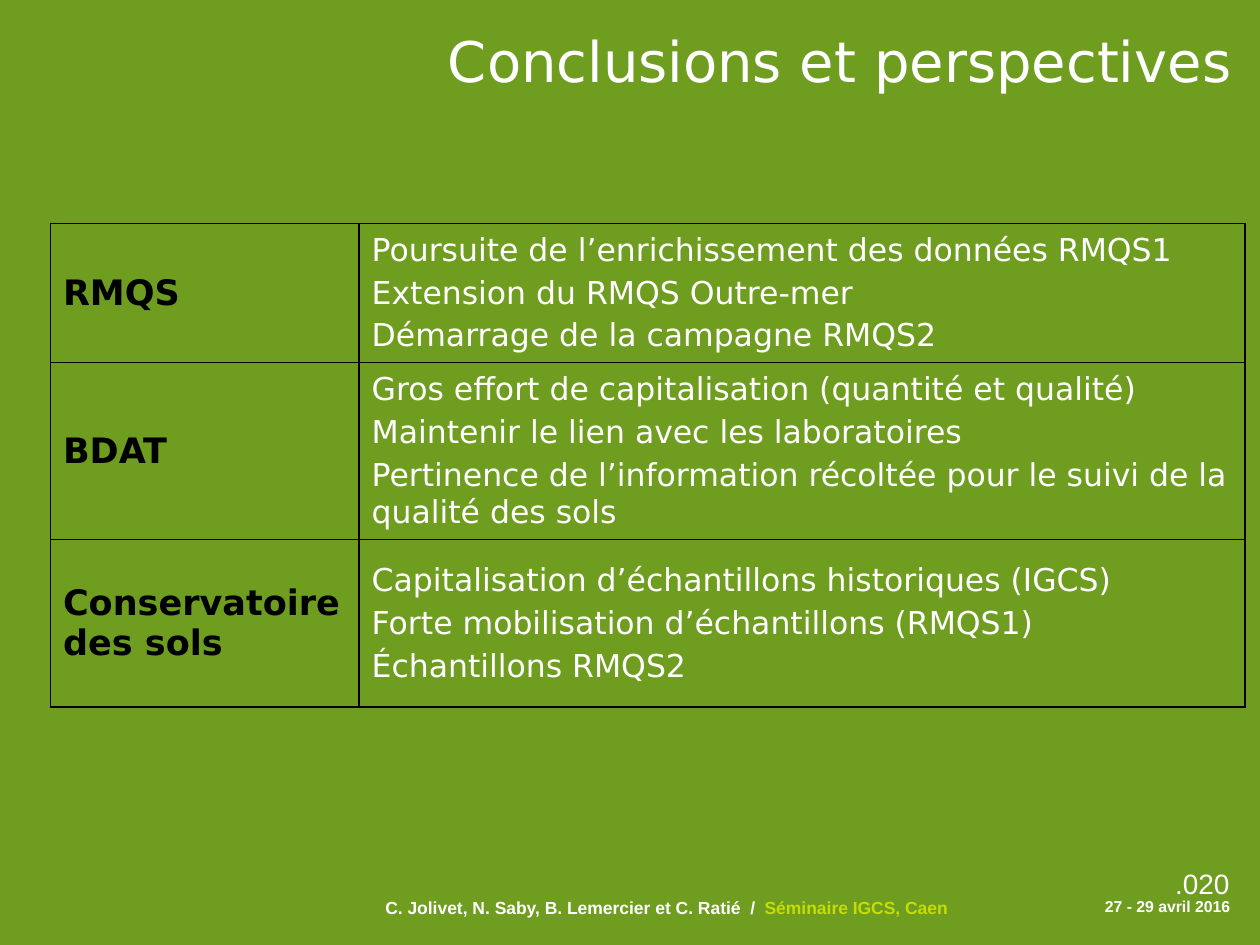
from lxml.etree import SubElement
from pptx import Presentation
from pptx.dml.color import RGBColor
from pptx.enum.text import MSO_ANCHOR, PP_ALIGN
from pptx.oxml.ns import qn
from pptx.util import Pt

COLORS = {"green": "6F9D20", "white": "FFFFFF", "black": "000000", "lime": "C5DD01"}
TITLE = {"name": "DejaVu Sans", "size": Pt(32), "bold": False}
HEAD = {"name": "DejaVu Sans", "size": Pt(20), "bold": True}
BODY = {"name": "DejaVu Sans", "size": Pt(18), "bold": False}
DATE = {"name": "Arial", "size": Pt(9), "bold": True}
PAGE = {"name": "Arial", "size": Pt(16), "bold": False}
CREDIT = {"name": "Arial", "size": Pt(10), "bold": True}
ROWS = [
    (79.4, "RMQS", [
        "Poursuite de l’enrichissement des données RMQS1",
        "Extension du RMQS Outre-mer",
        "Démarrage de la campagne RMQS2",
    ]),
    (101.2, "BDAT", [
        "Gros effort de capitalisation (quantité et qualité)",
        "Maintenir le lien avec les laboratoires",
        "Pertinence de l’information récoltée pour le suivi de la qualité des sols",
    ]),
    (95.6, "Conservatoire des sols", [
        "Capitalisation d’échantillons historiques (IGCS)",
        "Forte mobilisation d’échantillons (RMQS1)",
        "Échantillons RMQS2",
    ]),
]


def add_run(para, text, style, color):
    """Append a styled run to a paragraph."""
    run = para.add_run()
    run.text = text
    for key, value in style.items():
        setattr(run.font, key, value)
    run.font.color.rgb = RGBColor.from_string(COLORS[color])


def add_label(slide, box, parts, style, align=PP_ALIGN.RIGHT, anchor=MSO_ANCHOR.TOP):
    """Place one line of text made of coloured parts."""
    frame = slide.shapes.add_textbox(*map(Pt, box)).text_frame
    frame.word_wrap = True
    frame.vertical_anchor = anchor
    para = frame.paragraphs[0]
    para.alignment = align
    for text, color in parts:
        add_run(para, text, style, color)


def add_border(cell):
    """Draw a thin black line on each side of a cell."""
    props = cell._tc.get_or_add_tcPr()
    for side in ("lnL", "lnR", "lnT", "lnB"):
        line = SubElement(props, qn(f"a:{side}"), w=str(Pt(1)))
        fill = SubElement(line, qn("a:solidFill"))
        SubElement(fill, qn("a:srgbClr"), val=COLORS["black"])


def fill_cell(cell, lines, style, color):
    """Write the lines of a cell and set its look."""
    add_border(cell)
    cell.fill.background()
    cell.vertical_anchor = MSO_ANCHOR.MIDDLE
    frame = cell.text_frame
    for index, text in enumerate(lines):
        para = frame.add_paragraph() if index else frame.paragraphs[0]
        if index:
            para.space_before = Pt(3.6)
        add_run(para, text, style, color)


def add_grid(slide, left, top, width):
    """Place the table of programmes and their outlook."""
    height = sum(row[0] for row in ROWS)
    table = slide.shapes.add_table(len(ROWS), 2, *map(Pt, (left, top, width, height))).table
    table.first_row = table.horz_banding = False
    first = 176.4
    for column, size in zip(table.columns, (first, width - first)):
        column.width = Pt(size)
    for index, (size, name, lines) in enumerate(ROWS):
        table.rows[index].height = Pt(size)
        fill_cell(table.cell(index, 0), [name], HEAD, "black")
        fill_cell(table.cell(index, 1), lines, BODY, "white")


def add_footer(slide, left, top, right):
    """Place the authors, the page number and the date."""
    add_label(slide, (right - 150, top + 17.3, 150, 18),
              [("27 - 29 avril 2016", "white")], DATE)
    add_label(slide, (right - 89, top, 88.6, 19.4), [(".020", "white")], PAGE)
    add_label(slide, (left, top + 17.3, 429, 19.4),
              [("C. Jolivet, N. Saby, B. Lemercier et C. Ratié  / ", "white"),
               (" Séminaire IGCS, Caen", "lime")], CREDIT, PP_ALIGN.LEFT)


def main():
    """Build and save the slide."""
    deck = Presentation()
    deck.slide_width, deck.slide_height = Pt(720), Pt(540)
    slide = deck.slides.add_slide(deck.slide_layouts[6])
    fill = slide.background.fill
    fill.solid()
    fill.fore_color.rgb = RGBColor.from_string(COLORS["green"])
    add_footer(slide, 213.1, 491.8, 710)
    add_label(slide, (28.8, 11.5, 682.6, 45.4),
              [("Conclusions et perspectives", "white")], TITLE, anchor=MSO_ANCHOR.BOTTOM)
    add_grid(slide, 28.8, 127.8, 682.6)
    deck.save("out.pptx")


if __name__ == "__main__":
    main()
